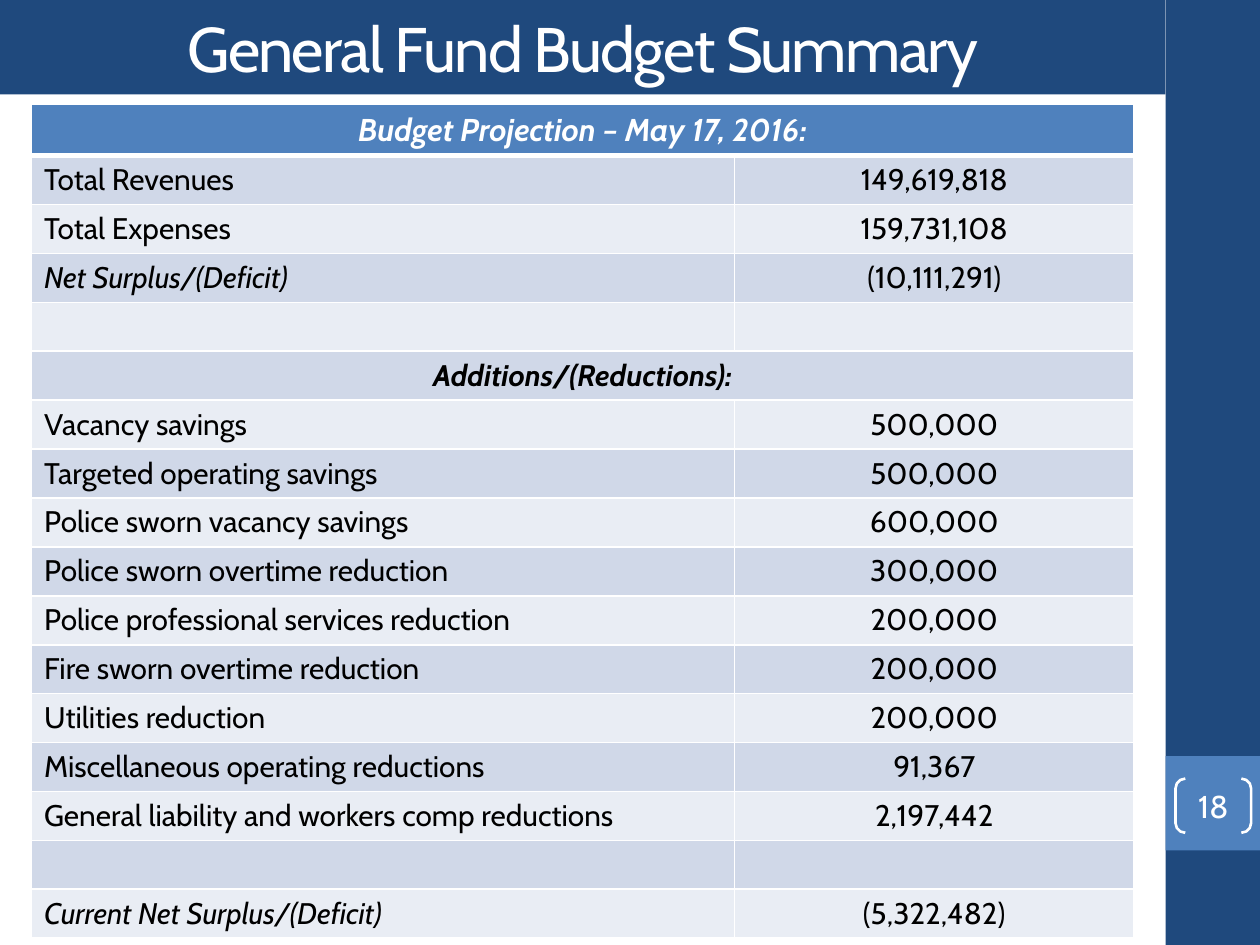
from pptx import Presentation
from pptx.dml.color import RGBColor
from pptx.enum.shapes import MSO_SHAPE
from pptx.enum.text import MSO_ANCHOR, PP_ALIGN
from pptx.oxml.ns import qn
from pptx.util import Inches, Pt
from lxml import etree

RECTANGLE = MSO_SHAPE.RECTANGLE
BRACKET_PAIR = MSO_SHAPE.DOUBLE_BRACKET
MIDDLE = MSO_ANCHOR.MIDDLE
LEFT, CENTER = PP_ALIGN.LEFT, PP_ALIGN.CENTER

NAVY = RGBColor(0x1F, 0x49, 0x7D)
BLUE = RGBColor(0x4F, 0x81, 0xBD)
DARK_BAND = RGBColor(0xD0, 0xD8, 0xE8)
LIGHT_BAND = RGBColor(0xE9, 0xED, 0xF4)
WHITE = RGBColor(0xFF, 0xFF, 0xFF)
BLACK = RGBColor(0, 0, 0)
FONT = "Cabin"

BUDGET_ROWS = [
    ("Budget Projection – May 17, 2016:",),
    ("Total Revenues", "149,619,818"),
    ("Total Expenses", "159,731,108"),
    ("Net Surplus/(Deficit)", "(10,111,291)"),
    ("", ""),
    ("Additions/(Reductions):",),
    ("Vacancy savings", "500,000"),
    ("Targeted operating savings", "500,000"),
    ("Police sworn vacancy savings", "600,000"),
    ("Police sworn overtime reduction", "300,000"),
    ("Police professional services reduction", "200,000"),
    ("Fire sworn overtime reduction", "200,000"),
    ("Utilities reduction", "200,000"),
    ("Miscellaneous operating reductions", "91,367"),
    ("General liability and workers comp reductions", "2,197,442"),
    ("", ""),
    ("Current Net Surplus/(Deficit)", "(5,322,482)"),
]


def write(text_frame, text, size, color, align=CENTER, bold=False, italic=False):
    paragraph = text_frame.paragraphs[0]
    paragraph.alignment = align
    run = paragraph.add_run()
    run.text = text
    run.font.name = FONT
    run.font.size = Pt(size)
    run.font.color.rgb = color
    run.font.bold = bold
    run.font.italic = italic
    return run


def add_panel(slide, box, color):
    panel = slide.shapes.add_shape(RECTANGLE, *map(Inches, box))
    panel.shadow.inherit = False
    panel.fill.solid()
    panel.fill.fore_color.rgb = color
    panel.line.fill.background()
    return panel


def add_title(slide, box):
    banner = add_panel(slide, box, NAVY)
    banner.text_frame.word_wrap = True
    banner.text_frame.vertical_anchor = MIDDLE
    title = write(banner.text_frame, "General Fund Budget Summary", 36, WHITE)
    title.font._element.set("spc", "-100")


def add_sidebar(slide, box):
    left, top, width, height = box
    add_panel(slide, box, NAVY)
    add_panel(slide, (left, top + height - 2 * width, width, width), BLUE)
    brackets = slide.shapes.add_shape(
        BRACKET_PAIR, Inches(left + 0.08), Inches(top + 6.18), Inches(0.6), Inches(0.43))
    brackets.shadow.inherit = False
    brackets.adjustments[0] = 0.18
    brackets.fill.background()
    brackets.line.color.rgb = WHITE
    brackets.line.width = Pt(1.5)
    number = brackets.text_frame
    number.margin_left = number.margin_right = 0
    number.margin_top = number.margin_bottom = 0
    number.vertical_anchor = MIDDLE
    write(number, "18", 18, WHITE)


def set_borders(cell, top, bottom):
    properties = cell._tc.get_or_add_tcPr()
    for side, points in (("L", 1), ("R", 1), ("T", top), ("B", bottom)):
        line = etree.SubElement(properties, qn(f"a:ln{side}"), w=str(Pt(points)))
        fill = etree.SubElement(line, qn("a:solidFill"))
        etree.SubElement(fill, qn("a:srgbClr"), val=str(WHITE))


def add_budget_table(slide, box):
    left, top, width, height = map(Inches, box)
    table = slide.shapes.add_table(len(BUDGET_ROWS), 2, left, top, width, height).table
    table.columns[0].width = Inches(5.58)
    table.columns[1].width = width - Inches(5.58)
    for index, entries in enumerate(BUDGET_ROWS):
        table.rows[index].height = height // len(BUDGET_ROWS)
        header = index == 0
        heading = len(entries) == 1
        band = BLUE if header else DARK_BAND if index % 2 else LIGHT_BAND
        for column in range(2):
            cell = table.cell(index, column)
            set_borders(cell, 3 if index == 1 else 1, 3 if header else 1)
            cell.fill.solid()
            cell.fill.fore_color.rgb = band
            if not any(entries):
                cell.margin_top = cell.margin_bottom = 0
        if heading:
            table.cell(index, 0).merge(table.cell(index, 1))
        for column, text in enumerate(entries):
            if text:
                write(
                    table.cell(index, column).text_frame, text,
                    18 if header else 17, WHITE if header else BLACK,
                    align=CENTER if heading or column else LEFT,
                    bold=heading,
                    italic=heading or "Net Surplus" in text)


def main():
    presentation = Presentation()
    presentation.slide_width = Inches(10)
    presentation.slide_height = Inches(7.5)
    slide = presentation.slides.add_slide(presentation.slide_layouts[6])
    add_sidebar(slide, (9.25, 0, 0.75, 7.5))
    add_title(slide, (0, 0, 9.25, 0.75))
    add_budget_table(slide, (0.25, 0.83, 8.75, 6.54))
    presentation.save("out.pptx")


if __name__ == "__main__":
    main()
